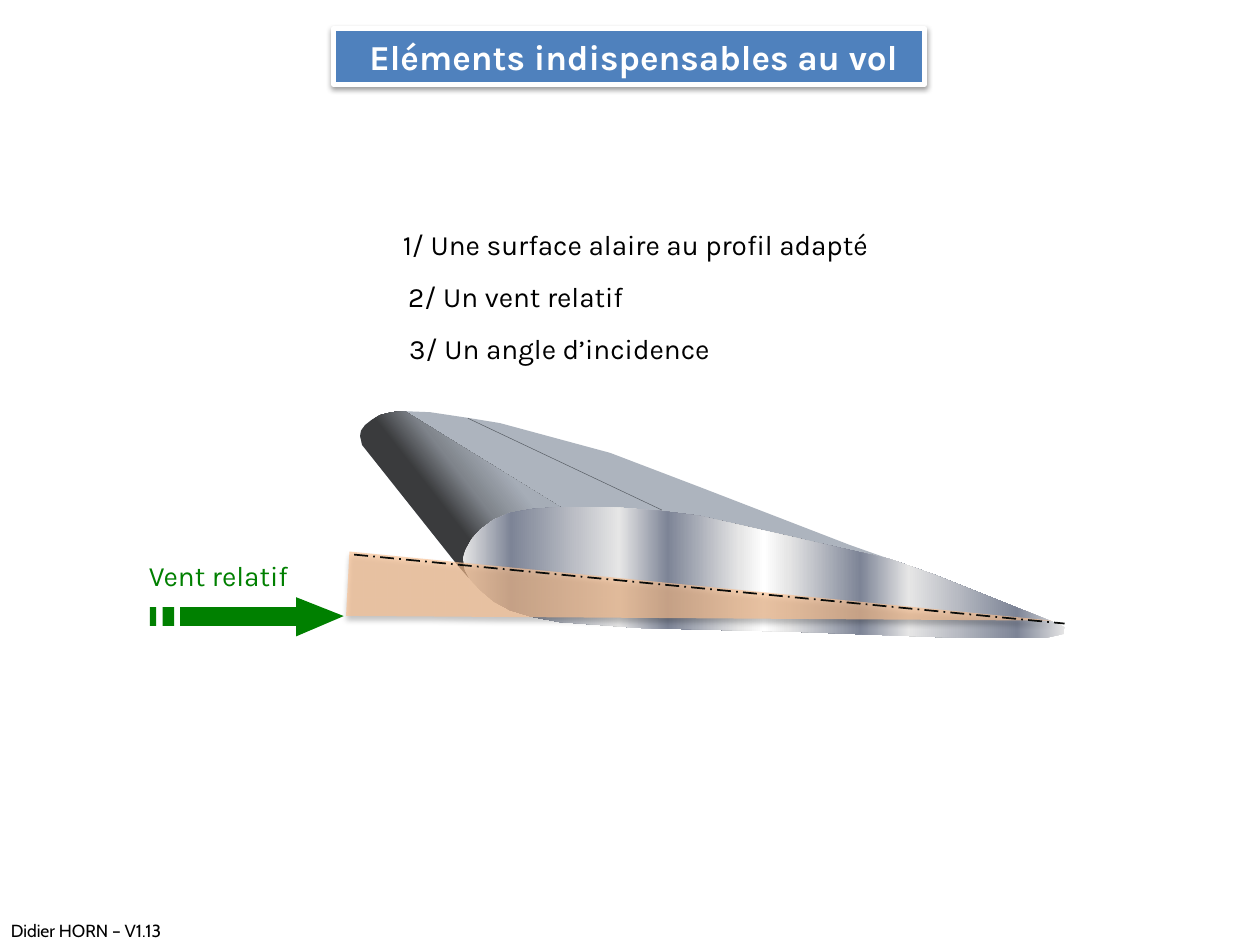
from lxml import etree
from pptx import Presentation
from pptx.dml.color import RGBColor
from pptx.enum.dml import MSO_LINE
from pptx.enum.shapes import MSO_CONNECTOR as CONNECTOR, MSO_SHAPE as SHAPE
from pptx.enum.text import MSO_ANCHOR as ANCHOR, PP_ALIGN as ALIGN
from pptx.oxml.ns import qn
from pptx.util import Cm, Pt

# All positions are in centimetres.
TITLE = "Eléments indispensables au vol"
FOOTER = "Didier HORN – V1.13 ©"
CONDITIONS = [
    ("1/ Une surface alaire au profil adapté", 7.87, 10.72),
    ("2/ Un vent relatif", 7.98, 7.14),
    ("3/ Un angle d’incidence", 8.0, 7.19),
]
CONDITIONS_TOP, CONDITIONS_STEP = 4.47, 1.04

WING_TOP = [
    (7.26, 8.79), (7.28, 8.68), (7.36, 8.57), (7.5, 8.46), (7.66, 8.37),
    (7.9, 8.31), (8.16, 8.29), (8.67, 8.31), (9.47, 8.43), (10.08, 8.53),
    (12.3, 9.13), (14.11, 9.82), (17.14, 10.99), (18.95, 11.63),
    (21.13, 12.5), (10.3, 11.9), (9.45, 11.65), (9.23, 11.4), (7.3, 8.97),
]
LEADING_EDGE = WING_TOP[:7] + [
    (11.29, 10.22), (10.28, 10.34), (9.68, 10.68), (9.33, 11.25),
    (9.45, 11.65), (9.23, 11.4), (7.3, 8.97),
]
PROFILE = [
    (9.33, 11.25), (9.38, 11.1), (9.51, 10.87), (9.68, 10.68),
    (9.95, 10.48), (10.28, 10.34), (10.75, 10.26), (11.29, 10.22),
    (12.3, 10.22), (13.31, 10.3), (14.11, 10.4), (15.32, 10.68),
    (17.94, 11.27), (18.85, 11.59), (21.13, 12.5), (21.47, 12.64),
    (21.45, 12.78), (21.07, 12.86), (19.35, 12.86), (16.13, 12.74),
    (12.9, 12.66), (11.29, 12.54), (10.75, 12.44), (10.28, 12.3),
    (9.95, 12.12), (9.68, 11.89), (9.48, 11.68), (9.37, 11.49),
]
CHROME = [
    (0, "E6E6E6"), (8, "7D8496"), (26, "E6E6E6"), (34, "7D8496"),
    (46, "E6E6E6"), (50, "FFFFFF"), (54, "E6E6E6"), (66, "7D8496"),
    (74, "E6E6E6"), (92, "7D8496"), (100, "E6E6E6"),
]
EDGE_SHADE = [(0, "3A3B3D"), (42, "3A3B3D"), (55, "7F848B"),
              (70, "A6ADB7"), (100, "ADB4BE")]

ARROW_HEAD = [(5.97, 12.04), (5.97, 12.24), (3.63, 12.24), (3.63, 12.62),
              (5.97, 12.62), (5.97, 12.83), (6.93, 12.42)]
ARROW_BARS = [(3.28, 3.51), (3.02, 3.15)]


def color(code):
    return RGBColor.from_string(code)


def add_node(parent, tag, **attributes):
    node = etree.SubElement(parent, qn(tag))
    for name, value in attributes.items():
        node.set(name, str(value))
    return node


def add_tint(parent, code, opacity):
    tint = add_node(parent, "a:srgbClr", val=code)
    add_node(tint, "a:alpha", val=opacity * 1000)


def cast_shadow(shape, opacity, distance):
    shape.shadow.inherit = False
    effects = shape._element.spPr.find(qn("a:effectLst"))
    shadow = add_node(effects, "a:outerShdw", blurRad=Pt(3.1),
                      dist=Pt(distance), dir=90 * 60000, rotWithShape=0)
    add_tint(shadow, "000000", opacity)


def paint_gradient(shape, stops, angle):
    shape.fill.gradient()
    shape.fill.gradient_angle = angle
    stop_list = shape._element.spPr.find(".//" + qn("a:gsLst"))
    for old in list(stop_list):
        stop_list.remove(old)
    for position, code in stops:
        stop = add_node(stop_list, "a:gs", pos=position * 1000)
        add_node(stop, "a:srgbClr", val=code)


def paint(shape, code):
    shape.fill.solid()
    shape.fill.fore_color.rgb = color(code)


def add_outline(page, *contours):
    """Add a closed freeform made of one or more contours."""
    points = [[(Cm(x), Cm(y)) for x, y in contour] for contour in contours]
    builder = page.shapes.build_freeform(*points[0][0])
    for index, contour in enumerate(points):
        if index:
            builder.move_to(*contour[0])
        builder.add_line_segments(contour[1:], close=True)
    shape = builder.convert_to_shape()
    shape.shadow.inherit = False
    shape.line.fill.background()
    return shape


def add_line(page, start, end, code, width):
    line = page.shapes.add_connector(
        CONNECTOR.STRAIGHT, *(Cm(value) for value in start + end))
    add_node(line._element.spPr, "a:effectLst")
    line.line.color.rgb = color(code)
    line.line.width = Pt(width)
    return line


def write(box, text, size=16, font="Karla", code="000000", bold=False,
          align=ALIGN.LEFT, anchor=ANCHOR.TOP):
    frame = box.text_frame
    frame.word_wrap = True
    frame.vertical_anchor = anchor
    para = frame.paragraphs[0]
    para.alignment = align
    span = para.add_run()
    span.text = text
    span.font.size, span.font.name, span.font.bold = Pt(size), font, bold
    span.font.color.rgb = color(code)
    return para


def add_text(page, text, left, top, width, height=0.94, **style):
    box = page.shapes.add_textbox(Cm(left), Cm(top), Cm(width), Cm(height))
    write(box, text, **style)


def draw_wing(page):
    paint(add_outline(page, WING_TOP), "ADB4BE")
    paint_gradient(add_outline(page, LEADING_EDGE), EDGE_SHADE, 38)
    add_line(page, (9.43, 8.43), (13.34, 10.28), "50555C", 0.25)
    paint_gradient(add_outline(page, PROFILE), CHROME, 0)


def draw_wind(page):
    bars = [[(left, 12.24), (left, 12.62), (right, 12.62), (right, 12.24)]
            for left, right in ARROW_BARS]
    paint(add_outline(page, ARROW_HEAD, *bars), "008000")
    add_text(page, "Vent relatif", 1.85, 11.13, 5.11, code="008000",
             align=ALIGN.CENTER)


def draw_incidence(page):
    wedge = page.shapes.add_shape(SHAPE.TRAPEZOID, Cm(13.46), Cm(5.03),
                                  Cm(1.3), Cm(14.22))
    wedge.adjustments[0] = 0.5
    wedge.rotation = 93
    paint(wedge, "FAC090")
    tint = wedge._element.spPr.find(qn("a:solidFill")).find(qn("a:srgbClr"))
    add_node(tint, "a:alpha", val=66000)
    wedge.line.fill.background()
    cast_shadow(wedge, 35, 1.8)
    chord = add_line(page, (7.14, 11.18), (21.46, 12.57), "0A0C0A", 1)
    chord.line.dash_style = MSO_LINE.LONG_DASH_DOT


def draw_title(page):
    banner = page.shapes.add_shape(SHAPE.RECTANGLE, Cm(6.73), Cm(0.58),
                                   Cm(11.91), Cm(1.12))
    paint(banner, "4F81BD")
    banner.line.color.rgb = color("FFFFFF")
    banner.line.width = Pt(3)
    cast_shadow(banner, 38, 1.6)
    para = write(banner, TITLE, size=20, code="FFFFFF", bold=True,
                 align=ALIGN.CENTER, anchor=ANCHOR.MIDDLE)
    para._p.get_or_add_pPr().set("marL", str(Cm(0.18)))


def main():
    deck = Presentation()
    deck.slide_width, deck.slide_height = Cm(25.4), Cm(19.05)
    page = deck.slides.add_slide(deck.slide_layouts[6])
    add_text(page, FOOTER, -0.03, 18.42, 3.81, 0.69, size=10, font="Cabin")
    draw_wing(page)
    draw_wind(page)
    draw_incidence(page)
    for row, (text, left, width) in enumerate(CONDITIONS):
        add_text(page, text, left, CONDITIONS_TOP + row * CONDITIONS_STEP, width)
    draw_title(page)
    deck.save("out.pptx")


if __name__ == "__main__":
    main()
